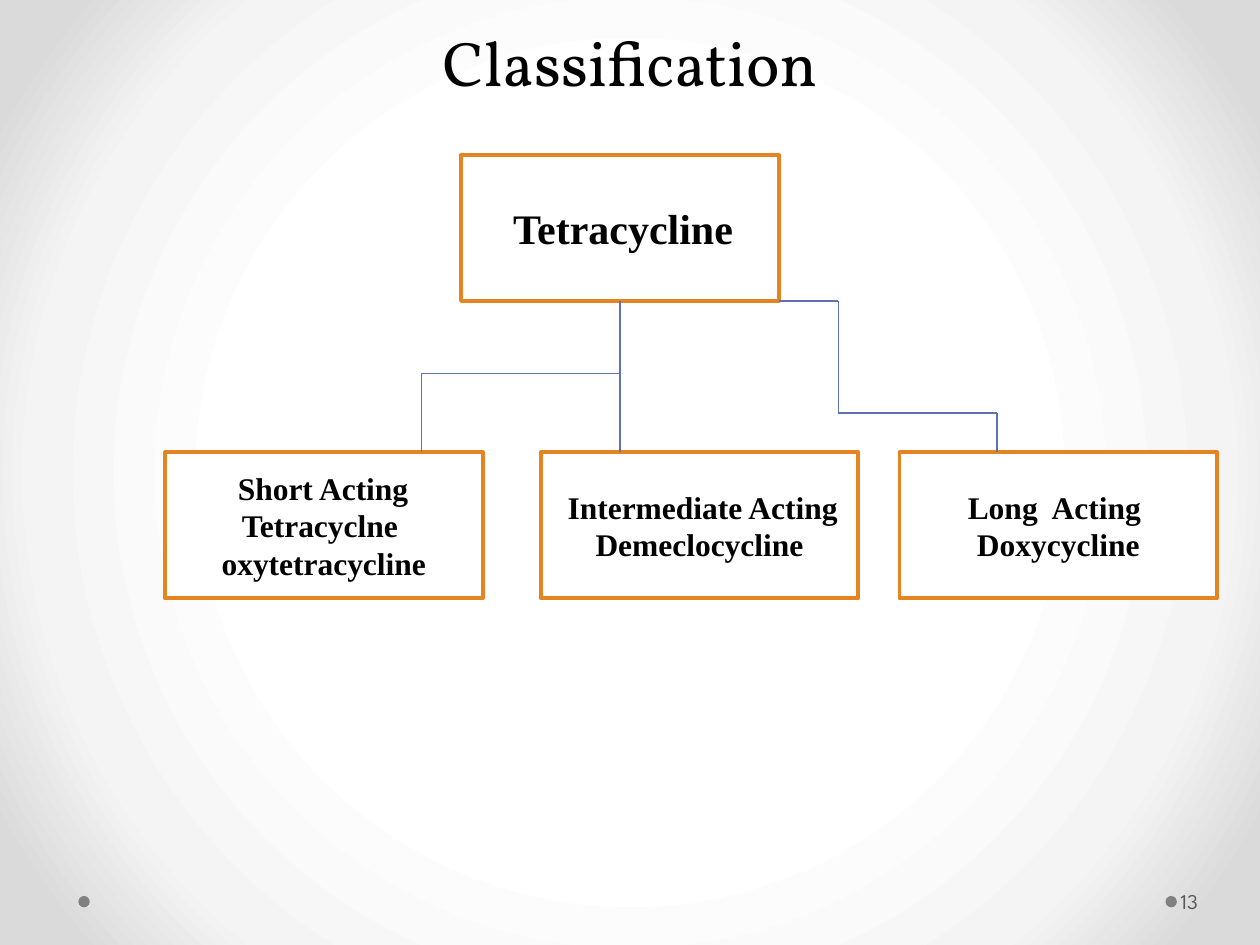
from itertools import pairwise

from pptx import Presentation
from pptx.dml.color import RGBColor
from pptx.enum.shapes import MSO_CONNECTOR as Link, MSO_SHAPE as Preset
from pptx.enum.text import MSO_ANCHOR as Anchor, PP_ALIGN as Align
from pptx.oxml import parse_xml
from pptx.oxml.ns import nsdecls
from pptx.util import Pt

BLACK = RGBColor(0x00, 0x00, 0x00)
WHITE = RGBColor(0xFF, 0xFF, 0xFF)
ORANGE = RGBColor(0xE6, 0x84, 0x22)
BLUE = RGBColor(0x5C, 0x72, 0xB2)
DOT_GREY = RGBColor(0x80, 0x80, 0x80)
NUMBER_GREY = RGBColor(0x59, 0x59, 0x59)
GRADIENT = {50: RGBColor(0xFF, 0xFF, 0xFF), 76: RGBColor(0xF4, 0xF4, 0xF4),
            92: RGBColor(0xDA, 0xDA, 0xDA)}

HEADING = {"name": "Vollkorn", "size": Pt(36), "bold": False}
SPACER = {"name": "Vollkorn", "size": Pt(18), "bold": False}
ROOT = {"name": "Times New Roman", "size": Pt(24), "bold": True}
BRANCH = {**ROOT, "size": Pt(18)}
NUMBER = {"name": "League Spartan", "size": Pt(12), "bold": False}

BOX_WIDTH, BOX_HEIGHT = 181.5, 83.5


class ChartSlide:
    """Holds the slide and the style of its classification chart."""

    def __init__(self, deck):
        self.slide = deck.slides.add_slide(deck.slide_layouts[5])
        self.shapes = self.slide.shapes

    def background(self, stops):
        marks = "".join(
            f'<a:gs pos="{at * 1000}"><a:srgbClr val="{color}"/></a:gs>'
            for at, color in stops.items())
        self.slide._element.cSld.insert(0, parse_xml(
            f'<p:bg {nsdecls("p", "a")}><p:bgPr><a:gradFill>'
            f'<a:gsLst>{marks}</a:gsLst><a:path path="circle">'
            '<a:fillToRect l="50000" t="50000" r="50000" b="50000"/></a:path>'
            '</a:gradFill><a:effectLst/></p:bgPr></p:bg>'))

    def add_text(self, paragraph, text, style, color=BLACK):
        run = paragraph.add_run()
        run.text = text
        for key, value in style.items():
            setattr(run.font, key, value)
        run.font.color.rgb = color

    def title(self, text, left, top, width, height):
        heading = self.shapes.title
        heading.left, heading.top = Pt(left), Pt(top)
        heading.width, heading.height = Pt(width), Pt(height)
        frame = heading.text_frame
        frame.word_wrap = True
        frame.vertical_anchor = Anchor.BOTTOM
        line = frame.paragraphs[0]
        line.alignment, line.line_spacing = Align.CENTER, Pt(58)
        self.add_text(line, text, HEADING)

    def preset(self, kind, left, top, width, height, fill):
        shape = self.shapes.add_shape(kind, Pt(left), Pt(top), Pt(width), Pt(height))
        shape.shadow.inherit = False
        shape.fill.solid()
        shape.fill.fore_color.rgb = fill
        return shape

    def dot(self, left):
        self.preset(Preset.OVAL, left, 512, 6.5, 6.5, DOT_GREY).line.fill.background()

    def box(self, left, top, lines, style, spaced=True):
        box = self.preset(Preset.RECTANGLE, left, top, BOX_WIDTH, BOX_HEIGHT, WHITE)
        box.line.color.rgb, box.line.width = ORANGE, Pt(2.25)
        frame = box.text_frame
        frame.word_wrap = True
        frame.vertical_anchor = Anchor.MIDDLE
        for index, text in enumerate(lines):
            line = frame.add_paragraph() if index else frame.paragraphs[0]
            line.alignment = Align.CENTER
            if spaced and not index:
                self.add_text(line, " ", SPACER)
            self.add_text(line, text, style)
        return box

    def route(self, *points):
        """Draws straight connectors from point to point; returns them."""
        links = []
        for start, end in pairwise(points):
            link = self.shapes.add_connector(Link.STRAIGHT, *map(Pt, start + end))
            link.line.color.rgb, link.line.width = BLUE, Pt(0.75)
            link._element.spPr.append(parse_xml(f'<a:effectLst {nsdecls("a")}/>'))
            links.append(link)
        return links

    def page_number(self, text, left, top, width, height):
        box = self.shapes.add_textbox(Pt(left), Pt(top), Pt(width), Pt(height))
        frame = box.text_frame
        frame.word_wrap = True
        frame.vertical_anchor = Anchor.MIDDLE
        frame.margin_left = Pt(2.2)
        frame.margin_right = Pt(3.6)
        self.add_text(frame.paragraphs[0], text, NUMBER, NUMBER_GREY)


def main():
    deck = Presentation()
    deck.slide_width, deck.slide_height = Pt(720), Pt(540)
    chart = ChartSlide(deck)

    # Background, title and footer
    chart.background(GRADIENT)
    chart.title("Classification", 36, 15, 648, 45.5)
    for left in (666, 44.8):
        chart.dot(left)
    chart.page_number("13", 672.5, 500.5, 44, 29)

    # Drug class and its three groups
    root_left, root_top, branch_top = 263.5, 88.5, 258.5
    tetracycline = chart.box(root_left, root_top, ["Tetracycline"], ROOT)
    chart.box(94.3, branch_top,
              ["Short Acting ", "Tetracyclne ", "oxytetracycline"], BRANCH)
    chart.box(309, branch_top, ["Intermediate Acting", "Demeclocycline"], BRANCH)
    chart.box(514, branch_top, ["Long  Acting ", "Doxycycline"], BRANCH, spaced=False)

    # Branch lines
    root_middle, root_right = root_left + BOX_WIDTH / 2, root_left + BOX_WIDTH
    root_bottom = root_top + BOX_HEIGHT
    short_x, short_y = 241, 213.3
    bend_x, long_x, long_y = 479, 569.7, 236
    chart.route((root_middle, short_y), (short_x, short_y), (short_x, branch_top))
    trunk, = chart.route((root_middle, root_bottom), (root_middle, branch_top))
    trunk.begin_connect(tetracycline, 2)
    chart.route((root_right, root_bottom), (bend_x, root_bottom), (bend_x, long_y),
                (long_x, long_y), (long_x, branch_top))

    deck.save("out.pptx")


if __name__ == "__main__":
    main()
